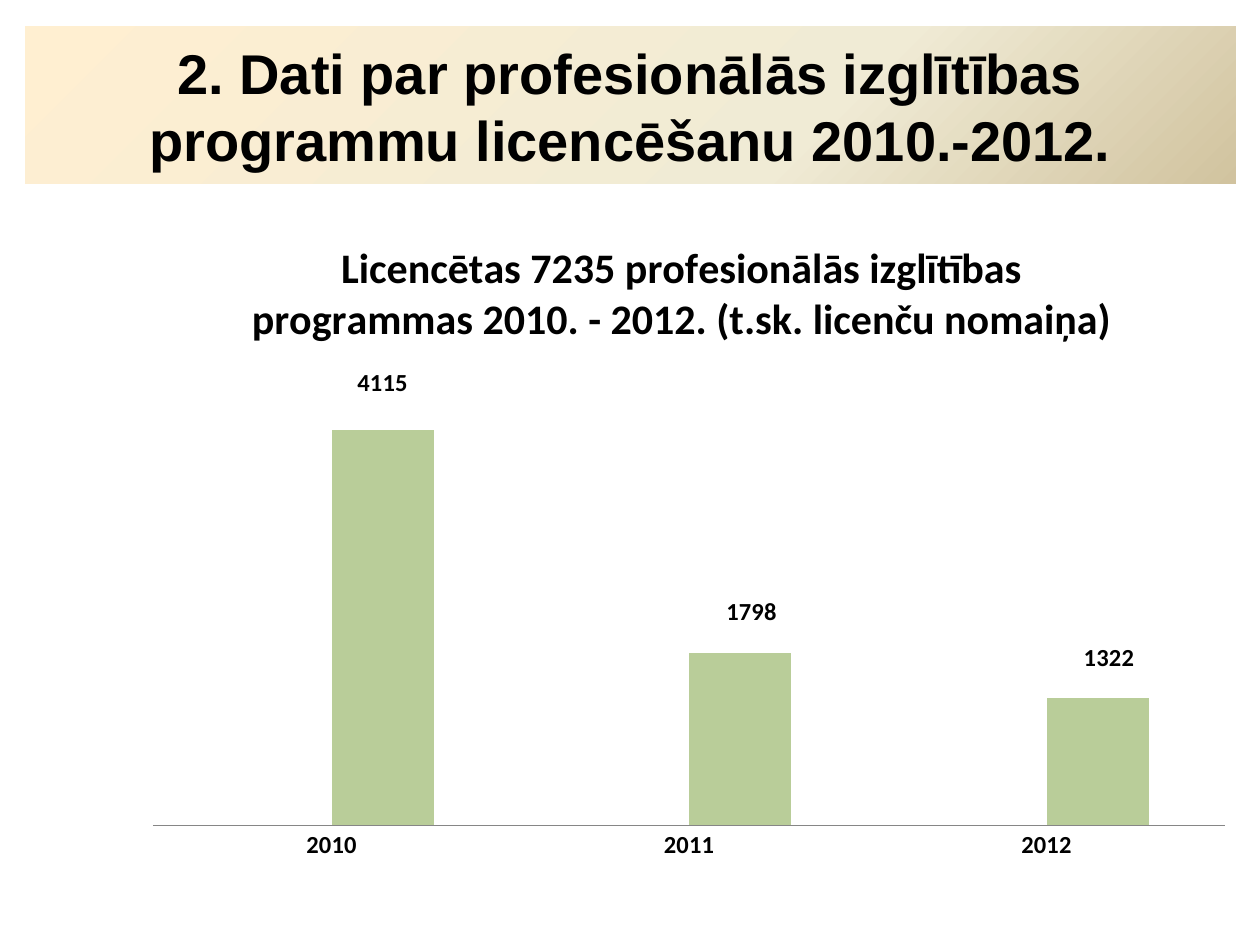
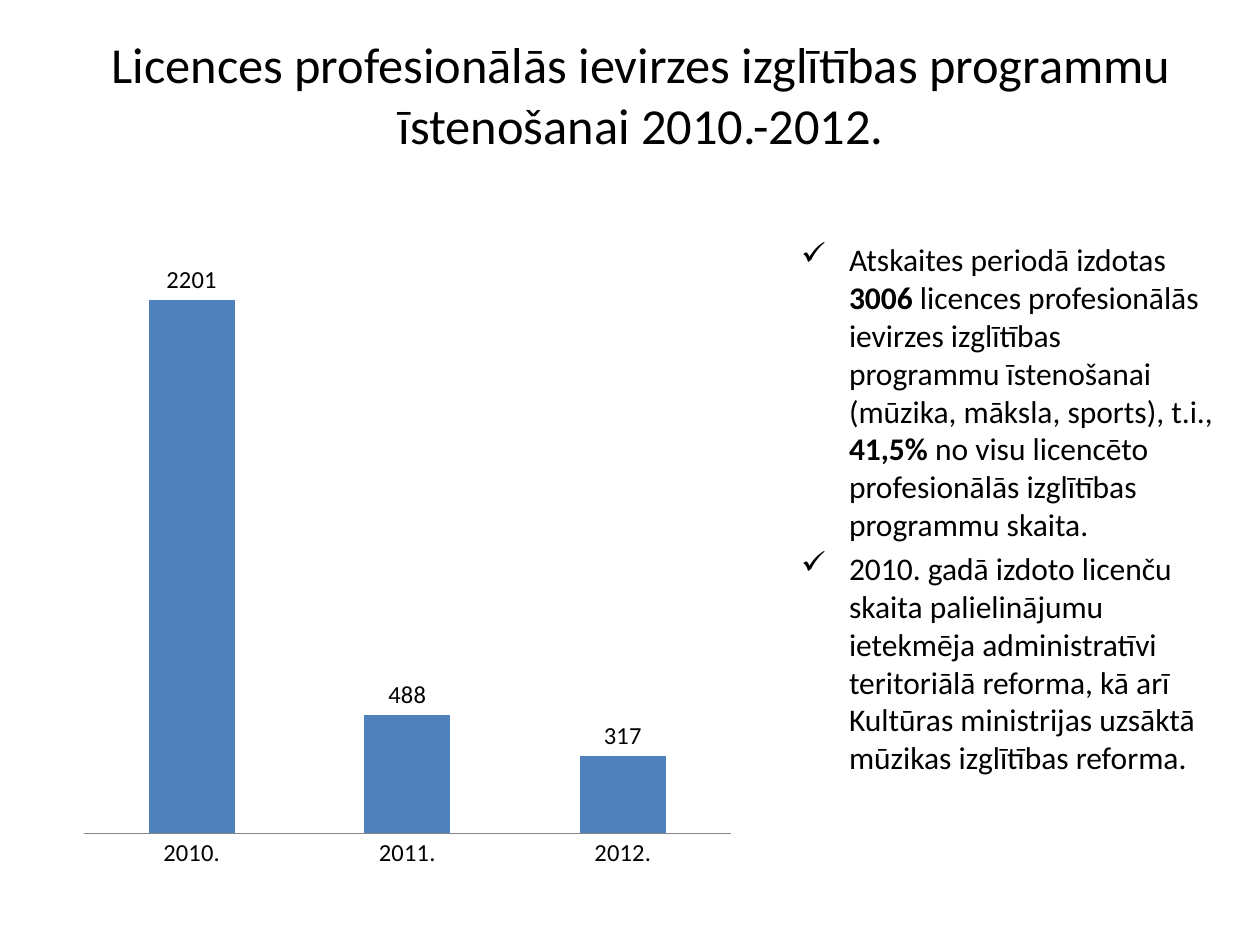
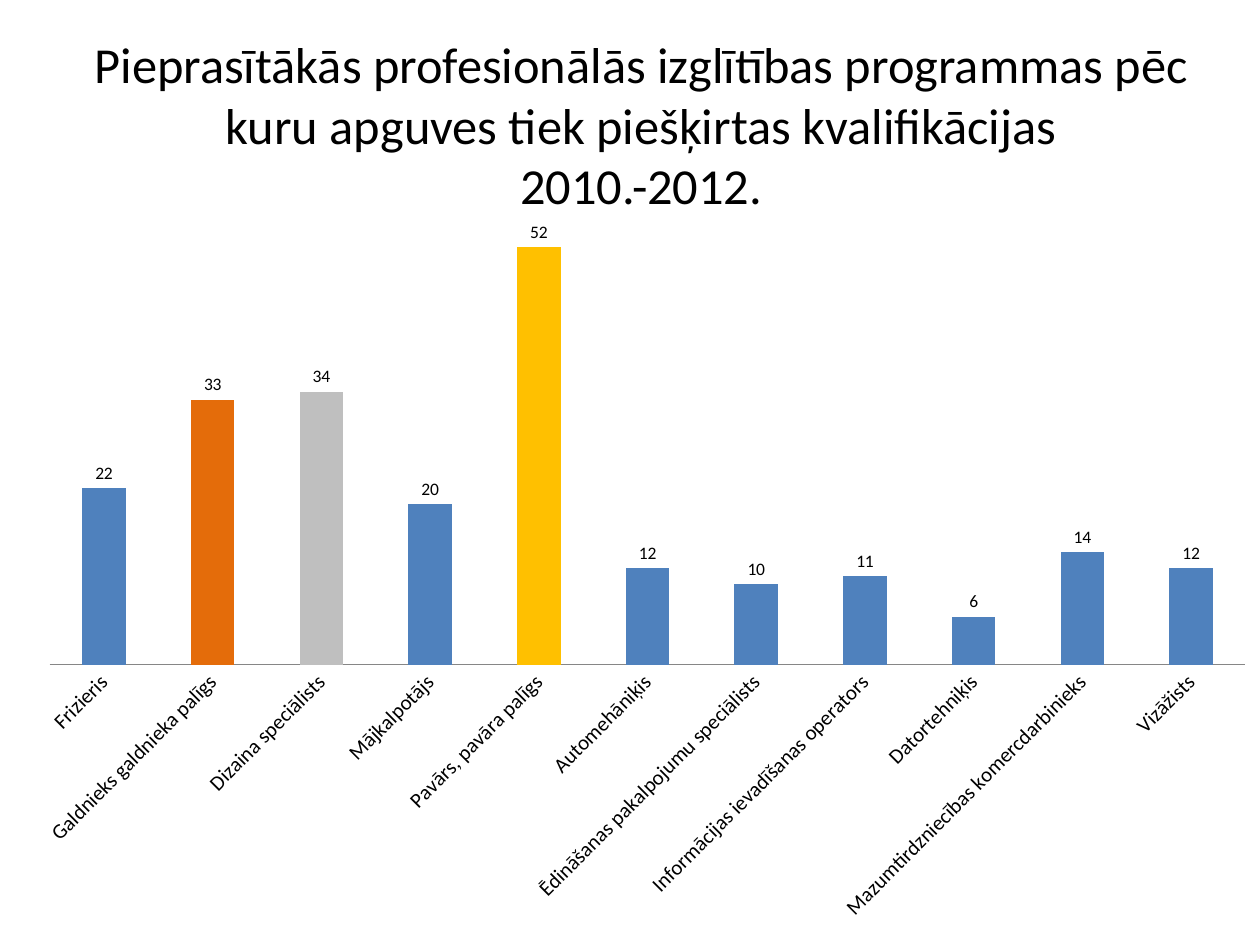
from copy import deepcopy

from lxml.etree import SubElement
from pptx import Presentation
from pptx.chart.data import CategoryChartData
from pptx.dml.color import RGBColor
from pptx.enum.chart import XL_CHART_TYPE, XL_LABEL_POSITION, XL_TICK_MARK
from pptx.enum.shapes import MSO_SHAPE
from pptx.enum.text import MSO_ANCHOR, PP_ALIGN
from pptx.oxml import parse_xml
from pptx.oxml.ns import nsdecls, qn
from pptx.util import Inches, Pt

COLORS = {
    "text": "000000",
    "axis": "868686",
    "blue": "4F81BD",
    "green": "B9CD99",
    "orange": "E46C0A",
    "grey": "BFBFBF",
    "yellow": "FFC000",
    "band_light": "FFEFD1",
    "band_middle": "F0EBD5",
    "band_dark": "D1C39F",
}
COLUMNS, ROWS = 100, 75
CELL = Inches(0.1)
BODY_FONT, BAND_FONT = "Calibri", "Arial"
TITLE_SIZE = 28.8
BAND_STOPS = [(0, "band_light"), (0.65, "band_middle"), (1, "band_dark")]


def color(name):
    return RGBColor.from_string(COLORS[name])


def grid(*cells):
    return [int(cell * CELL) for cell in cells]


def format_font(font, size, bold=False, name=BODY_FONT):
    font.name, font.size, font.bold = name, Pt(size), bold
    font.color.rgb = color("text")


def write_title(shape, text, size=TITLE_SIZE, bold=False, name=BODY_FONT):
    frame = shape.text_frame
    frame.word_wrap = True
    frame.vertical_anchor = MSO_ANCHOR.MIDDLE
    paragraph = frame.paragraphs[0]
    paragraph.text = text
    paragraph.alignment = PP_ALIGN.CENTER
    for run in paragraph.runs:
        format_font(run.font, size, bold, name)


def add_title(slide, text, top):
    box = slide.shapes.add_textbox(*grid(5.9, top, 90, 12.5))
    box.text_frame.margin_bottom = grid(5.3)[0]
    write_title(box, text)


def add_title_band(slide, text):
    band = slide.shapes.add_shape(MSO_SHAPE.RECTANGLE, *grid(2, 2.1, 96.1, 12.5))
    band.shadow.inherit = False
    band.line.fill.background()
    band.fill.gradient()
    band.fill.gradient_angle = 315
    stop_list = band._element.spPr.find(".//" + qn("a:gsLst"))
    stop_list.append(deepcopy(stop_list[0]))
    for stop, (position, name) in zip(band.fill.gradient_stops, BAND_STOPS):
        stop.position = position
        stop.color.rgb = color(name)
    write_title(band, text, 32, True, BAND_FONT)


def add_checklist(slide, cells, items):
    frame = slide.shapes.add_textbox(*grid(*cells)).text_frame
    frame.word_wrap = True
    for number, parts in enumerate(items):
        paragraph = frame.add_paragraph() if number else frame.paragraphs[0]
        paragraph.space_before = Pt(3.6)
        properties = paragraph._p.get_or_add_pPr()
        properties.set("marL", str(Inches(0.38)))
        properties.set("indent", str(-Inches(0.38)))
        SubElement(properties, qn("a:buChar"), char="✓")
        for text, bold in parts:
            run = paragraph.add_run()
            run.text = text
            format_font(run.font, 18, bold)


def set_layout(parent, index, **values):
    for layout in parent.findall(qn("c:layout")):
        parent.remove(layout)
    entries = "".join(f'<c:{key} val="{value}"/>' for key, value in values.items())
    parent.insert(index, parse_xml(
        f'<c:layout {nsdecls("c")}><c:manualLayout>{entries}</c:manualLayout></c:layout>'))


def style_axes(chart, maximum, size, bold):
    chart.value_axis.visible = False
    chart.value_axis.has_major_gridlines = False
    chart.value_axis.minimum_scale = 0
    chart.value_axis.maximum_scale = maximum
    axis = chart.category_axis
    axis.major_tick_mark = axis.minor_tick_mark = XL_TICK_MARK.NONE
    axis.format.line.color.rgb = color("axis")
    format_font(axis.tick_labels.font, size, bold)


def show_labels(series, size, bold):
    labels = series.data_labels
    labels.show_value = True
    labels.position = XL_LABEL_POSITION.OUTSIDE_END
    format_font(labels.font, size, bold)
    for leader_lines in labels._element.findall(qn("c:showLeaderLines")):
        leader_lines.set("val", "0")


def add_column_chart(slide, cells, categories, series, maximum, plot_area,
                     axis_size, label_size, bold=False):
    data = CategoryChartData()
    data.categories = categories
    for values, _ in series:
        data.add_series("", values)
    chart = slide.shapes.add_chart(XL_CHART_TYPE.COLUMN_CLUSTERED, *grid(*cells), data).chart
    chart.has_title = chart.has_legend = False
    format_font(chart.font, 10)
    style_axes(chart, maximum, axis_size, bold)
    plot = chart.plots[0]
    plot.gap_width = 150
    plot.vary_by_categories = False
    for column, (values, fill) in zip(plot.series, series):
        if any(values):
            column.format.fill.solid()
            column.format.fill.fore_color.rgb = color(fill)
            show_labels(column, label_size, bold)
    left, top, width, height = plot_area
    set_layout(chart._chartSpace.chart.plotArea, 0, layoutTarget="inner",
               xMode="edge", yMode="edge", x=left, y=top, w=width, h=height)
    return chart


def add_chart_title(chart, text, left, top):
    chart.has_title = True
    frame = chart.chart_title.text_frame
    frame.text = text
    format_font(frame.paragraphs[0].runs[0].font, 24, True)
    set_layout(chart.chart_title._element, 1, xMode="edge", yMode="edge", x=left, y=top)


def shift_labels(series, size, shifts):
    for number, (right, down) in enumerate(shifts):
        label = series.points[number].data_label
        format_font(label.font, size, True)
        label.position = XL_LABEL_POSITION.OUTSIDE_END
        set_layout(label._get_or_add_dLbl(), 1, x=right, y=down)


def color_points(series, fills):
    for number, name in fills.items():
        fill = series.points[number].format.fill
        fill.solid()
        fill.fore_color.rgb = color(name)


def slant_categories(chart):
    body = chart.category_axis._element.find(qn("c:txPr")).find(qn("a:bodyPr"))
    body.set("rot", str(-45 * 60000))
    body.set("vert", "horz")


def build_licensing(slide):
    add_title_band(slide, "2. Dati par profesionālās izglītības programmu licencēšanu 2010.-2012.")
    chart = add_column_chart(
        slide, (6.7, 16.2, 90.6, 53.6), ["2010", "2011", "2012"],
        [([None] * 3, "blue"), ([4115, 1798, 1322], "green")],
        4500, (0.06, 0.28, 0.94, 0.64), 14, 14, True)
    add_chart_title(
        chart,
        "Licencētas 7235 profesionālās izglītības programmas 2010. - 2012. (t.sk. licenču nomaiņa)",
        0.14, 0.04)
    shift_labels(chart.plots[0].series[1], 14, [(0, -0.04), (0.01, -0.03), (0.01, -0.03)])


def build_orientation_licences(slide):
    add_title(slide, "Licences profesionālās ievirzes izglītības programmu īstenošanai 2010.-2012.", 3.6)
    add_checklist(slide, (62.6, 18.6, 34.8, 49.6), [
        [("Atskaites periodā izdotas ", False),
         ("3006", True),
         (" licences profesionālās ievirzes izglītības programmu īstenošanai "
          "(mūzika, māksla, sports), t.i., ", False),
         ("41,5% ", True),
         ("no visu licencēto profesionālās izglītības programmu skaita.", False)],
        [("2010. gadā izdoto licenču skaita palielinājumu ietekmēja administratīvi teritoriālā "
          "reforma, kā arī Kultūras ministrijas uzsāktā mūzikas izglītības reforma.", False)],
    ])
    add_column_chart(
        slide, (5, 17.5, 55.2, 52.3), ["2010.", "2011.", "2012."],
        [([2201, 488, 317], "blue")],
        2500, (0.03, 0.01, 0.93, 0.92), 14, 14)


def build_qualifications(slide):
    add_title(slide, "Pieprasītākās profesionālās izglītības programmas pēc kuru apguves "
                     "tiek piešķirtas kvalifikācijas\v2010.-2012.", 6)
    qualifications = {
        "Frizieris": 22,
        "Galdnieks galdnieka palīgs": 33,
        "Dizaina speciālists": 34,
        "Mājkalpotājs": 20,
        "Pavārs, pavāra palīgs": 52,
        "Automehāniķis": 12,
        "Ēdināšanas pakalpojumu speciālists": 10,
        "Informācijas ievadīšanas operators": 11,
        "Datortehniķis": 6,
        "Mazumtirdzniecības komercdarbinieks": 14,
        "Vizāžists": 12,
    }
    chart = add_column_chart(
        slide, (2, 13.9, 96.9, 59.8), list(qualifications),
        [(list(qualifications.values()), "blue")],
        60, (0.02, 0.01, 0.98, 0.64), 12, 10)
    color_points(chart.plots[0].series[0], {1: "orange", 2: "grey", 4: "yellow"})
    slant_categories(chart)


def main():
    presentation = Presentation()
    presentation.slide_width, presentation.slide_height = grid(COLUMNS, ROWS)
    blank = presentation.slide_layouts[6]
    for build in (build_licensing, build_orientation_licences, build_qualifications):
        build(presentation.slides.add_slide(blank))
    presentation.save("out.pptx")


if __name__ == "__main__":
    main()
